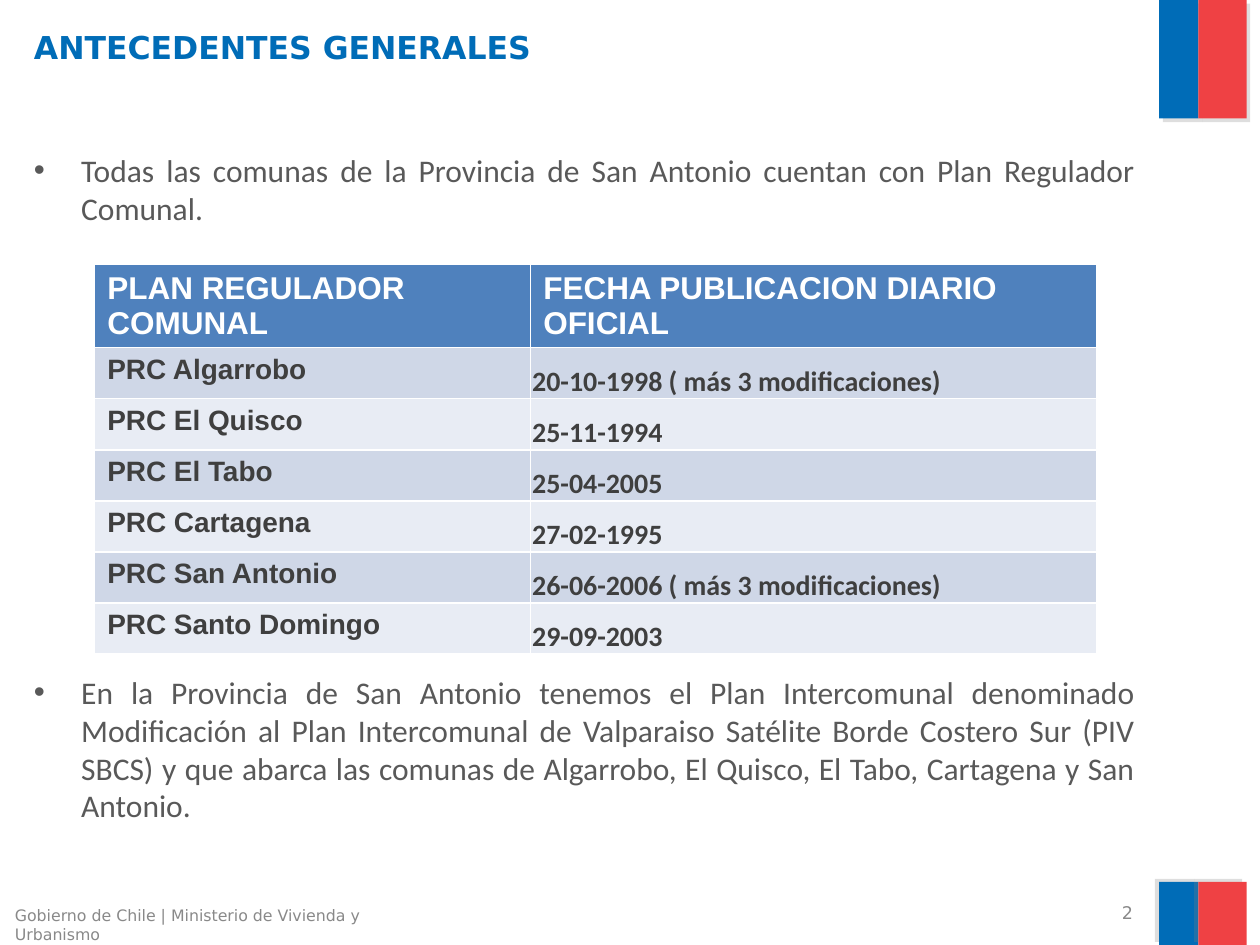
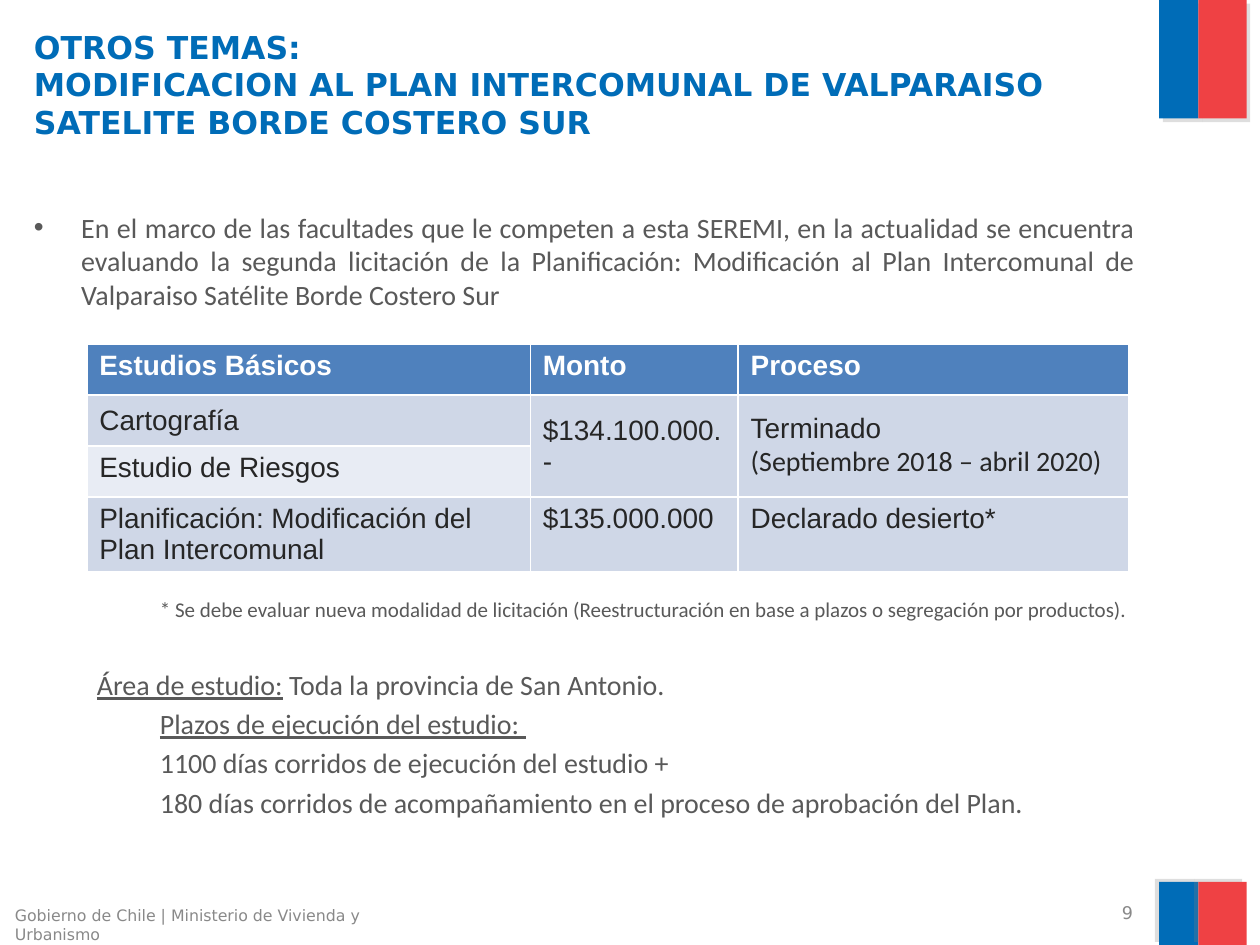
import pptx
import pptx.util
import pptx.dml.color
import pptx.enum.shapes
import pptx.enum.text
import pptx.oxml
import pptx.oxml.ns

Cm, Pt = pptx.util.Cm, pptx.util.Pt
ALIGN = pptx.enum.text.PP_ALIGN
ANCHOR = pptx.enum.text.MSO_ANCHOR

HUES = {"blue": "006CB7", "red": "EF4144", "shade": "808080", "text": "595959",
        "foot": "898989", "head": "4F81BD", "odd": "CFD7E7", "even": "E8ECF4",
        "white": "FFFFFF", "dark": "3F3F3F", "ink": "262626"}
TITLE = {"name": "DejaVu Sans", "size": Pt(18), "bold": True}
FOOT = "Gobierno de Chile | Ministerio de Vivienda y Urbanismo"
TIGHT = {"margin_left": Cm(0.03), "margin_right": Cm(0.03), "margin_top": Cm(0.03),
         "margin_bottom": 0, "vertical_anchor": ANCHOR.BOTTOM}
MID = {"vertical_anchor": ANCHOR.MIDDLE}


def rgb(hue):
    return pptx.dml.color.RGBColor.from_string(HUES[hue])


def dress(item, form):
    for key, value in form.items():
        setattr(item, key, value)


def ink(run, hue, form):
    dress(run.font, form)
    run.font.color.rgb = rgb(hue)


class Deck:
    def __init__(self):
        self.prs = pptx.Presentation()
        self.prs.slide_width, self.prs.slide_height = Cm(25.4), Cm(19.05)
        self.slide = None

    def start(self, title, page):
        """Add a slide with its bands, title and footer."""
        self.slide = self.prs.slides.add_slide(self.prs.slide_layouts[1])
        for top, tall, angle in ((0, 2.39, 45), (17.78, 1.27, 215)):
            self.band(23.37, top, 0.79, tall, "blue", angle)
            self.band(24.16, top, 0.97, tall, "red", angle)
        head = self.slide.shapes.title
        self.place(head, 0.43, 0.43, 22.68, 3.18)
        head.text_frame.text = title
        for par in head.text_frame.paragraphs:
            par.alignment = ALIGN.LEFT
            ink(par.runs[0], "blue", TITLE)
        self.note(0.05, 18.14, 8.05, 0.69, FOOT, 9)
        self.note(17.17, 18.14, 5.92, 0.53, str(page), 10, ALIGN.RIGHT, ANCHOR.MIDDLE)

    def place(self, shape, left, top, width, height, anchor=ANCHOR.TOP):
        dress(shape, {"left": Cm(left), "top": Cm(top),
                      "width": Cm(width), "height": Cm(height)})
        dress(shape.text_frame, {"word_wrap": True, "vertical_anchor": anchor,
                                 "auto_size": pptx.enum.text.MSO_AUTO_SIZE.NONE})

    def band(self, left, top, width, height, hue, angle):
        shape = self.slide.shapes.add_shape(
            pptx.enum.shapes.MSO_SHAPE.RECTANGLE, Cm(left), Cm(top), Cm(width), Cm(height))
        shape.fill.solid()
        shape.fill.fore_color.rgb = rgb(hue)
        shape.line.fill.background()
        shape.shadow.inherit = False
        glow = shape._element.spPr.find(pptx.oxml.ns.qn("a:effectLst"))
        glow.append(pptx.oxml.parse_xml(
            f'<a:outerShdw {pptx.oxml.ns.nsdecls("a")} blurRad="0" dist="{Pt(3)}" '
            f'dir="{angle * 60000}" algn="ctr" rotWithShape="0">'
            f'<a:srgbClr val="{HUES["shade"]}"><a:alpha val="25000"/></a:srgbClr>'
            '</a:outerShdw>'))

    def note(self, left, top, width, height, text, size, align=ALIGN.LEFT, anchor=ANCHOR.TOP):
        box = self.slide.shapes.add_textbox(0, 0, 0, 0)
        self.place(box, left, top, width, height, anchor)
        par = box.text_frame.paragraphs[0]
        par.text, par.alignment = text, align
        ink(par.runs[0], "foot", {"name": "DejaVu Sans", "size": Pt(size)})

    def body(self, top, height, items):
        """Each item: space before, indent (None for a bullet), size, runs.
        A run that starts with an underscore is underlined."""
        shape = self.slide.placeholders[1]
        self.place(shape, 0.43, top, 22.71, height)
        frame = shape.text_frame
        for i, (gap, inset, size, *runs) in enumerate(items):
            par = frame.add_paragraph() if i else frame.paragraphs[0]
            dress(par, {"alignment": ALIGN.JUSTIFY, "space_before": Pt(gap)})
            if inset is not None:
                prop = par._p.get_or_add_pPr()
                prop.set("marL", str(Cm(inset)))
                prop.set("indent", "0")
                prop.append(pptx.oxml.parse_xml(
                    f'<a:buNone {pptx.oxml.ns.nsdecls("a")}/>'))
            for text in runs:
                run = par.add_run()
                run.text = text.removeprefix("_")
                ink(run, "text", {"name": "Calibri", "size": Pt(size),
                                  "underline": text.startswith("_")})

    def table(self, left, top, cols, rows, data, sizes, hue, bold):
        """Sizes are those of the head row and of the rows under it."""
        grid = self.slide.shapes.add_table(
            len(rows), len(cols), Cm(left), Cm(top), Cm(sum(cols)), Cm(sum(rows))).table
        for col, width in zip(grid.columns, cols):
            col.width = Cm(width)
        for r, (row, height) in enumerate(zip(grid.rows, rows)):
            row.height = Cm(height)
            for cell, text in zip(row.cells, data[r]):
                cell.fill.solid()
                cell.fill.fore_color.rgb = rgb(("odd" if r % 2 else "even") if r else "head")
                cell.text = text
                for par in cell.text_frame.paragraphs:
                    for run in par.runs:
                        ink(run, hue if r else "white",
                            {"name": "Arial", "size": Pt(sizes[r > 0]),
                             "bold": bold or r == 0})
        return grid


def plans(deck):
    deck.start("ANTECEDENTES GENERALES", 2)
    deck.body(2.92, 14.81, [
        (0, None, 18, "Todas las comunas de la Provincia de San Antonio cuentan con "
         "Plan Regulador Comunal."),
        (255, None, 18, "En la Provincia de San Antonio tenemos el Plan Intercomunal "
         "denominado Modificación al Plan Intercomunal de Valparaiso Satélite Borde "
         "Costero Sur (PIV SBCS) y que abarca las comunas de Algarrobo, El Quisco, "
         "El Tabo, Cartagena y San Antonio.")])
    data = [("PLAN REGULADOR COMUNAL", "FECHA PUBLICACION DIARIO OFICIAL"),
            ("PRC Algarrobo", "20-10-1998 ( más 3 modificaciones)"),
            ("PRC El Quisco", "25-11-1994"),
            ("PRC El Tabo", "25-04-2005"),
            ("PRC Cartagena", "27-02-1995"),
            ("PRC San Antonio", "26-06-2006 ( más 3 modificaciones)"),
            ("PRC Santo Domingo", "29-09-2003")]
    grid = deck.table(1.91, 5.33, [8.79, 11.4], [1.67] + [1.03] * 6, data,
                      (18, 16), "dark", True)
    # Dates sit low in their cells
    for r in range(1, len(data)):
        cell = grid.cell(r, 1)
        dress(cell, TIGHT)
        cell.text_frame.paragraphs[0].runs[0].font.name = "Calibri"


def topics(deck):
    deck.start("OTROS TEMAS:\nMODIFICACION AL PLAN INTERCOMUNAL DE VALPARAISO "
               "SATELITE BORDE COSTERO SUR", 9)
    deck.body(4.11, 14.02, [
        (0, None, 16, "En el marco de las facultades que le competen a esta SEREMI, en la "
         "actualidad se encuentra evaluando la segunda licitación de la Planificación: "
         "Modificación al Plan Intercomunal de Valparaiso Satélite Borde Costero Sur"),
        (163, 2.54, 12, "* Se debe evaluar nueva modalidad de licitación (Reestructuración "
         "en base a plazos o segregación por productos)."),
        (26.4, 1.27, 16, "_Área de estudio:", " Toda la provincia de San Antonio."),
        (3.2, 2.54, 16, "_Plazos de ejecución del estudio: "),
        (3.2, 2.54, 16, "1100 días corridos de ejecución del estudio +"),
        (3.2, 2.54, 16, "180 días corridos de acompañamiento en el proceso de "
         "aprobación del Plan.")])
    data = [("Estudios Básicos", "Monto", "Proceso"),
            ("Cartografía", "$134.100.000.-", "Terminado\n(Septiembre 2018 – abril 2020)"),
            ("Estudio de Riesgos", "", ""),
            ("Planificación: Modificación del Plan Intercomunal", "$135.000.000",
             "Declarado desierto*")]
    grid = deck.table(1.75, 6.93, [8.94, 4.19, 7.87], [1.03, 1.03, 1.03, 1.5], data,
                      (16, 16), "ink", False)
    # Amount and process cover both finished studies
    for c in range(3):
        dress(grid.cell(1, c), MID)
        if c:
            grid.cell(1, c).merge(grid.cell(2, c))
    grid.cell(1, 2).text_frame.paragraphs[1].runs[0].font.name = "Calibri"


def main():
    deck = Deck()
    plans(deck)
    topics(deck)
    deck.prs.save("out.pptx")


if __name__ == "__main__":
    main()
